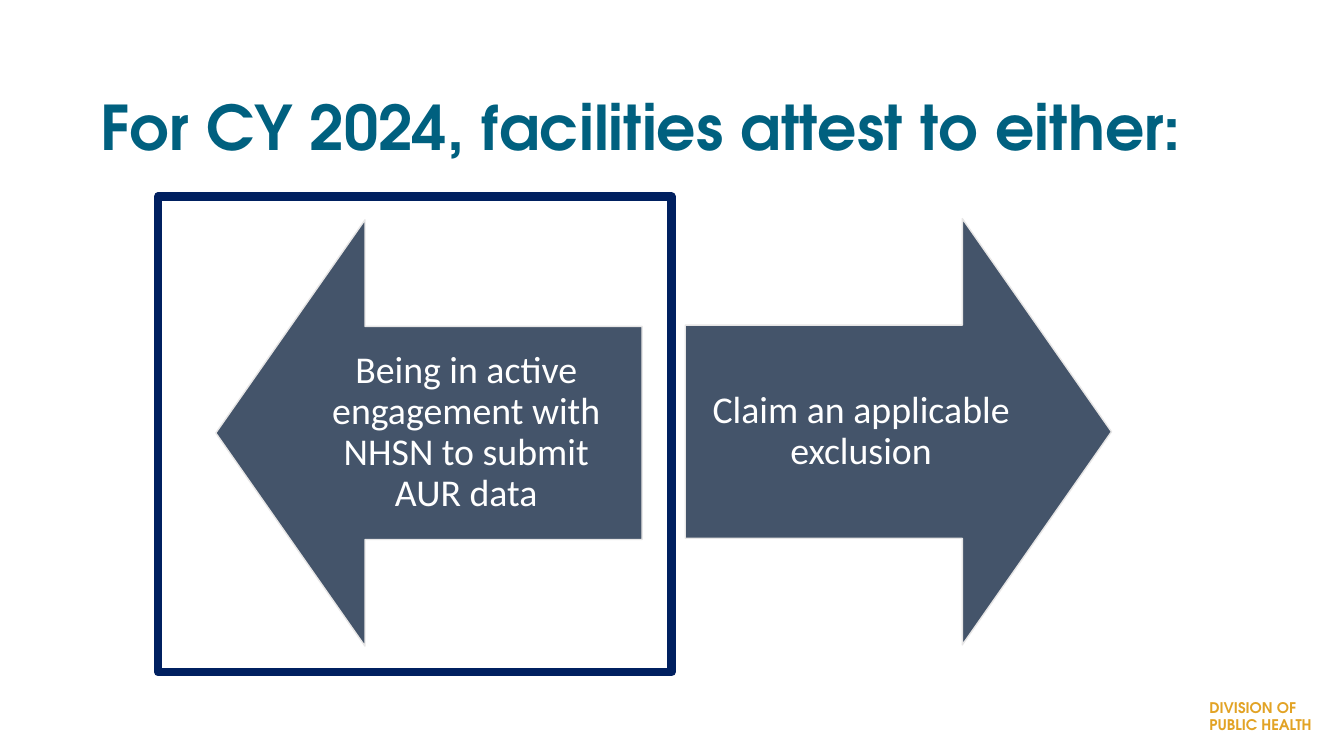
from pptx import Presentation
from pptx.dml.color import RGBColor
from pptx.enum.shapes import MSO_SHAPE
from pptx.enum.text import MSO_ANCHOR, PP_ALIGN
from pptx.util import Cm, Pt

HEADING_FONT = "TeX Gyre Adventor"
BODY_FONT = "Calibri"
ARROW_SIZE = 10.74
LABEL_WIDTH, LABEL_HEIGHT = 8.86, 5.38


def color(value):
    return RGBColor.from_string(value)


def add_text(page, area, lines, font, paragraph_format=None, inset=None,
             anchor=MSO_ANCHOR.TOP):
    """Add a text box; area is left, top, width, height in centimetres."""
    box = page.shapes.add_textbox(*map(Cm, area))
    frame = box.text_frame
    frame.word_wrap = True
    frame.vertical_anchor = anchor
    if inset is not None:
        for side in ("left", "top", "right", "bottom"):
            setattr(frame, f"margin_{side}", Cm(inset))
    frame.text = "\n".join(lines)
    name, size, hue, bold = font
    for para in frame.paragraphs:
        for key, value in (paragraph_format or {}).items():
            setattr(para, key, value)
        for span in para.runs:
            for key, value in {"name": name, "size": Pt(size), "bold": bold}.items():
                setattr(span.font, key, value)
            span.font.color.rgb = color(hue)


def add_outlined(page, kind, area, line, weight, fill=None):
    shape = page.shapes.add_shape(kind, *map(Cm, area))
    shape.shadow.inherit = False
    if fill:
        shape.fill.solid()
        shape.fill.fore_color.rgb = color(fill)
    else:
        shape.fill.background()
    shape.line.color.rgb = color(line)
    shape.line.width = Pt(weight)
    return shape


def add_choice(page, left, top, rotation, label):
    """Add a sideways arrow with its label set against the arrow's tail."""
    arrow = add_outlined(page, MSO_SHAPE.UP_ARROW,
                         (left, top, ARROW_SIZE, ARROW_SIZE), "E7E6E6", 1, "44546A")
    arrow.rotation = rotation
    arrow.adjustments[0] = 0.5
    arrow.adjustments[1] = 0.35
    label_left = left + ARROW_SIZE - LABEL_WIDTH if rotation == 270 else left
    label_top = top + (ARROW_SIZE - LABEL_HEIGHT) / 2
    add_text(page, (label_left, label_top, LABEL_WIDTH, LABEL_HEIGHT), [label],
             (BODY_FONT, 27, "FFFFFF", False),
             {"alignment": PP_ALIGN.CENTER, "line_spacing": 0.9},
             inset=0.53, anchor=MSO_ANCHOR.MIDDLE)


def main():
    deck = Presentation()
    deck.slide_width, deck.slide_height = Cm(33.87), Cm(19.05)
    page = deck.slides.add_slide(deck.slide_layouts[6])

    add_text(page, (30.23, 17.48, 3.64, 1.14), ["DIVISION OF", "PUBLIC HEALTH"],
             (HEADING_FONT, 10.5, "E2A325", True))
    add_text(page, (2.54, 2.59, 28.78, 1.6),
             ["For CY 2024, facilities attest to either:"],
             (HEADING_FONT, 44, "00607F", True), {"line_spacing": 0.8}, inset=0)
    add_choice(page, 5.44, 5.54, 270,
               "Being in active engagement with NHSN to submit AUR data")
    add_choice(page, 17.27, 5.51, 90, "Claim an applicable exclusion")
    add_outlined(page, MSO_SHAPE.RECTANGLE, (3.99, 4.95, 12.93, 11.99), "002060", 6)

    deck.save("out.pptx")


if __name__ == "__main__":
    main()
